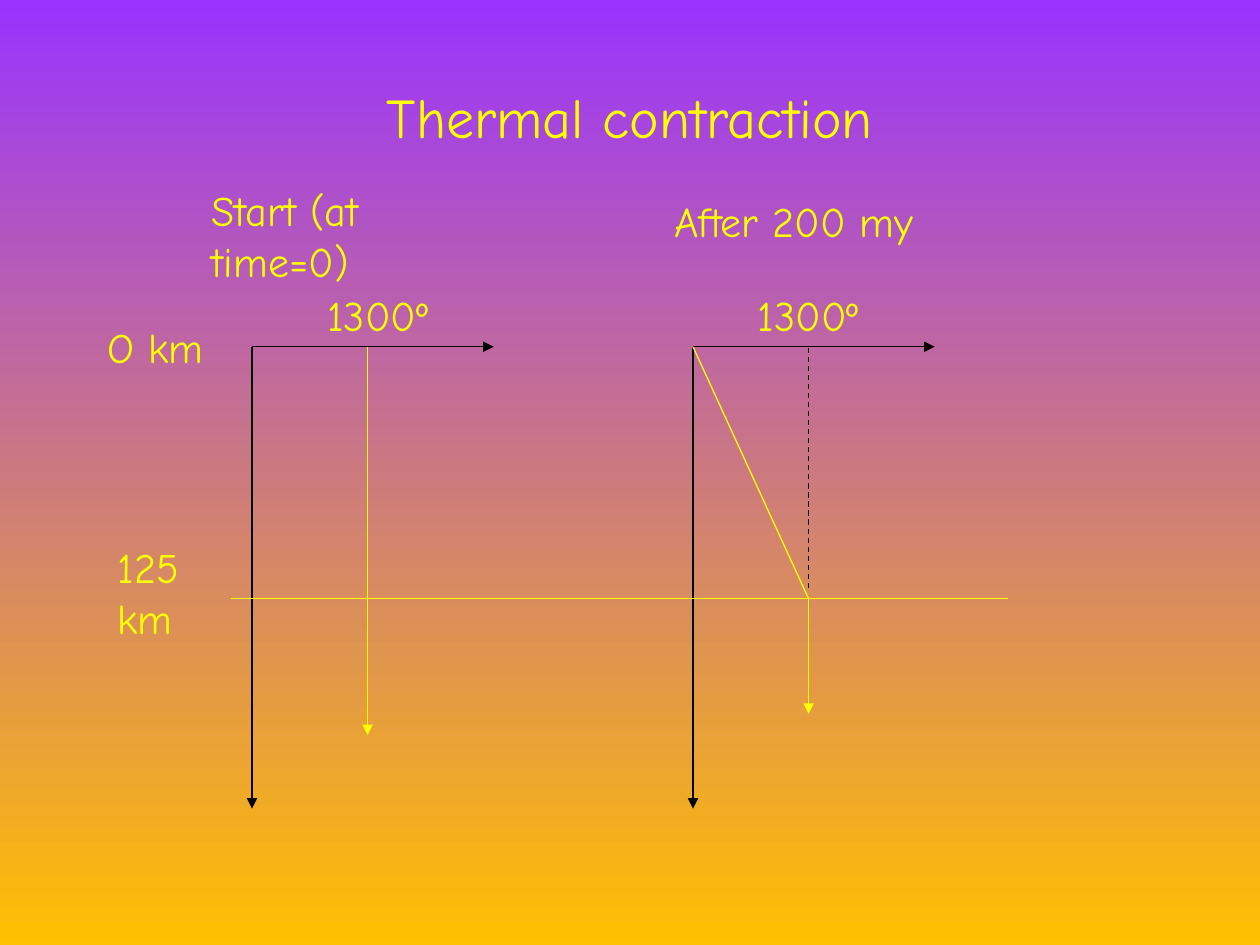
from lxml.etree import SubElement
from pptx import Presentation
from pptx.dml.color import RGBColor
from pptx.enum.dml import MSO_LINE
from pptx.enum.shapes import MSO_CONNECTOR
from pptx.enum.text import MSO_ANCHOR, MSO_AUTO_SIZE, PP_ALIGN
from pptx.oxml.ns import qn
from pptx.util import Cm, Pt

COLORS = {"top": "9933FF", "bottom": "FFC000", "accent": "FFFF00", "axis": "000000"}
FONT = "Comic Neue"

TITLE = "Thermal contraction"
LABELS = [
    ("125 km", 2.12, 10.8, 2.33, 2.29, True),
    ("O km", 1.91, 6.35, 3.18, 1.27, True),
    ("1300º", 6.35, 5.72, 3.39, 1.27, True),
    ("1300º", 15.03, 5.72, 2.82, 1.27, False),
    ("Start (at time=0)", 4.02, 3.6, 5.29, 2.29, True),
    ("After 200 my", 13.34, 3.81, 6.56, 1.27, True),
]

START_X, LATER_X = 5.08, 13.97
SURFACE_Y, BASE_Y, AXIS_END_Y = 6.99, 12.07, 16.3
AXIS_WIDTH, ISOTHERM_OFFSET = 4.87, 2.33
START_ISOTHERM_X = START_X + ISOTHERM_OFFSET
LATER_ISOTHERM_X = LATER_X + ISOTHERM_OFFSET

AXES = [
    line
    for x in (START_X, LATER_X)
    for line in (
        (x, SURFACE_Y, x + AXIS_WIDTH, SURFACE_Y, "axis", True, False),
        (x, SURFACE_Y, x, AXIS_END_Y, "axis", True, False),
    )
]
PROFILES = [
    (START_ISOTHERM_X, SURFACE_Y, START_ISOTHERM_X, 14.82, "accent", True, False),
    (4.66, BASE_Y, 20.32, BASE_Y, "accent", False, False),
    (LATER_X, SURFACE_Y, LATER_ISOTHERM_X, BASE_Y, "accent", False, False),
    (LATER_ISOTHERM_X, BASE_Y, LATER_ISOTHERM_X, 14.39, "accent", True, False),
    (LATER_ISOTHERM_X, 11.85, LATER_ISOTHERM_X, SURFACE_Y, "axis", False, True),
]


def color(name):
    return RGBColor.from_string(COLORS[name])


def add_run(paragraph, text, size):
    run = paragraph.add_run()
    run.text = text
    run.font.name = FONT
    run.font.size = Pt(size)
    run.font.color.rgb = color("accent")


def add_label(slide, text, left, top, width, height, wraps):
    shape = slide.shapes.add_textbox(Cm(left), Cm(top), Cm(width), Cm(height))
    frame = shape.text_frame
    frame.word_wrap = wraps
    frame.auto_size = MSO_AUTO_SIZE.SHAPE_TO_FIT_TEXT
    add_run(frame.paragraphs[0], text, 24)


def add_line(slide, x1, y1, x2, y2, color_name, arrow, dashed):
    connector = slide.shapes.add_connector(
        MSO_CONNECTOR.STRAIGHT, Cm(x1), Cm(y1), Cm(x2), Cm(y2)
    )
    connector.line.color.rgb = color(color_name)
    connector.line.width = Pt(0.75)
    if dashed:
        connector.line.dash_style = MSO_LINE.DASH
    properties = connector.element.spPr
    if arrow:
        SubElement(properties.find(qn("a:ln")), qn("a:tailEnd"), type="triangle")
    SubElement(properties, qn("a:effectLst"))


def main():
    presentation = Presentation()
    presentation.slide_width = Cm(25.4)
    presentation.slide_height = Cm(19.05)
    slide = presentation.slides.add_slide(presentation.slide_layouts[5])

    fill = slide.background.fill
    fill.gradient()
    fill.gradient_angle = 270
    for stop, position, name in zip(fill.gradient_stops, (0, 1), ("top", "bottom")):
        stop.position = position
        stop.color.rgb = color(name)

    title = slide.shapes.title
    title.left, title.top, title.width, title.height = Cm(1.27), Cm(0.76), Cm(22.86), Cm(3.18)
    title.text_frame.vertical_anchor = MSO_ANCHOR.MIDDLE
    paragraph = title.text_frame.paragraphs[0]
    paragraph.alignment = PP_ALIGN.CENTER
    add_run(paragraph, TITLE, 32)

    for line in AXES + PROFILES:
        add_line(slide, *line)
    for label in LABELS:
        add_label(slide, *label)

    presentation.save("out.pptx")


if __name__ == "__main__":
    main()
